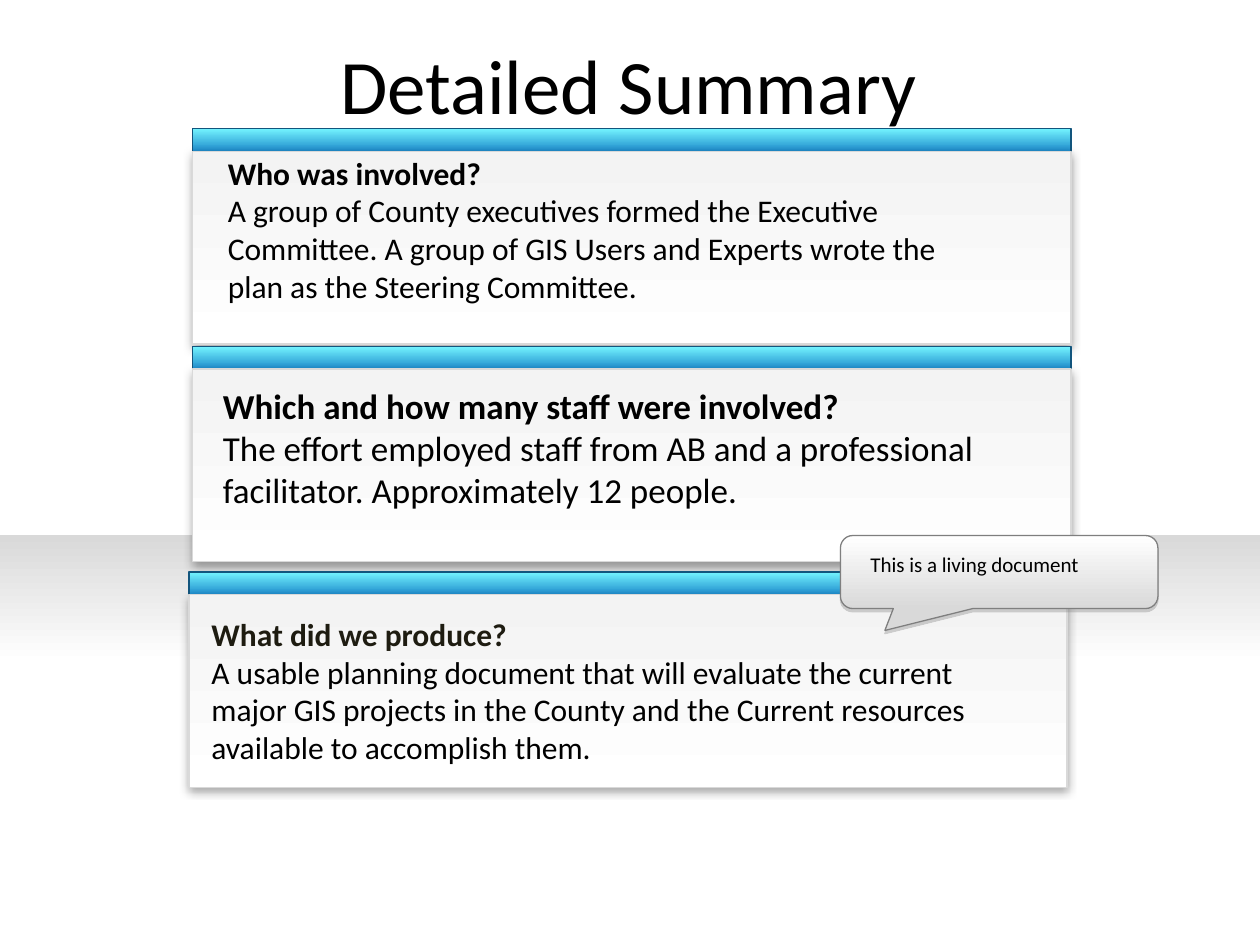
"""Build the Detailed Summary slide with three headed panels and a callout."""
from dataclasses import dataclass

from lxml import etree
from pptx import Presentation
from pptx.dml.color import RGBColor
from pptx.enum.shapes import MSO_SHAPE
from pptx.enum.text import MSO_ANCHOR, PP_ALIGN
from pptx.oxml.ns import qn
from pptx.util import Inches, Pt

RECT = MSO_SHAPE.RECTANGLE
CALLOUT = MSO_SHAPE.ROUNDED_RECTANGULAR_CALLOUT
LEFT, CENTER = PP_ALIGN.LEFT, PP_ALIGN.CENTER
TOP, MIDDLE = MSO_ANCHOR.TOP, MSO_ANCHOR.MIDDLE


@dataclass(frozen=True)
class Theme:
    font: str = "Calibri"
    text: str = "000000"
    dark_text: str = "1E1C11"
    white: str = "FFFFFF"
    grey: str = "D9D9D9"
    panel_top: str = "F3F3F3"
    bar_top: str = "74F4FF"
    bar_bottom: str = "208ECD"
    bar_line: str = "12557D"
    callout_line: str = "7F7F7F"
    callout_shadow: str = "808080"
    title_size: int = 44
    large_size: int = 20
    body_size: int = 18
    note_size: int = 12


THEME = Theme()


@dataclass(frozen=True)
class Box:
    left: float
    top: float
    width: float
    height: float

    def lengths(self) -> tuple:
        return tuple(map(Inches, (self.left, self.top, self.width, self.height)))


@dataclass(frozen=True)
class Panel:
    left: float
    top: float
    text_box: Box
    heading: str
    body: str
    size: int = THEME.body_size
    heading_color: str = THEME.text


PANELS = (
    Panel(1.53, 1.02, Box(1.71, 1.17, 6.2, 1.31), "Who was involved?",
          "A group of County executives formed the Executive Committee. "
          "A group of GIS Users and Experts wrote the plan as the Steering Committee."),
    Panel(1.53, 2.75, Box(1.67, 3, 6.75, 1.11), "Which and how many staff were involved?",
          "The effort employed staff from AB and a professional facilitator. "
          "Approximately 12 people.", size=THEME.large_size),
    Panel(1.5, 4.54, Box(1.58, 4.83, 6.6, 1.31), "What did we produce?",
          "A usable planning document that will evaluate the current major GIS projects "
          "in the County and the Current resources available to accomplish them.",
          heading_color=THEME.dark_text),
)


def add_shadow(sp, color: str, blur: float) -> None:
    shadow = etree.SubElement(
        sp._element.spPr.find(qn("a:effectLst")), qn("a:outerShdw"),
        blurRad=str(Pt(blur)), dist=str(Pt(1.8)), dir="5400000",
        algn="t", rotWithShape="0")
    clr = etree.SubElement(shadow, qn("a:srgbClr"), val=color)
    etree.SubElement(clr, qn("a:alpha"), val="35000")


def add_gradient_shape(s, kind, box: Box, start: str, end: str,
                       stop: float = 1, line: str | None = None):
    sp = s.shapes.add_shape(kind, *box.lengths())
    sp.shadow.inherit = False
    sp.fill.gradient()
    sp.fill.gradient_angle = 270
    for gs, color, position in zip(sp.fill.gradient_stops, (start, end), (0, stop)):
        gs.color.rgb = RGBColor.from_string(color)
        gs.position = position
    if line:
        sp.line.color.rgb = RGBColor.from_string(line)
        sp.line.width = Pt(0.75)
    else:
        sp.line.fill.background()
    return sp


def add_text(s, text: str, box: Box, *, size: int, color: str = THEME.text,
             heading: str = "", heading_color: str = THEME.text,
             align=LEFT, anchor=TOP) -> None:
    tf = s.shapes.add_textbox(*box.lengths()).text_frame
    tf.word_wrap = True
    tf.vertical_anchor = anchor
    lines = [(heading, heading_color, True)] if heading else []
    lines.append((text, color, False))
    for i, (line, line_color, bold) in enumerate(lines):
        p = tf.add_paragraph() if i else tf.paragraphs[0]
        p.alignment = align
        r = p.add_run()
        r.text = line
        r.font.name = THEME.font
        r.font.size = Pt(size)
        r.font.bold = bold
        r.font.color.rgb = RGBColor.from_string(line_color)


def add_panel(s, panel: Panel) -> None:
    add_gradient_shape(s, RECT, Box(panel.left, panel.top, 6.97, 0.22),
                       THEME.bar_top, THEME.bar_bottom, 0.8, THEME.bar_line)
    sp = add_gradient_shape(s, RECT, Box(panel.left, panel.top + 0.18, 6.97, 1.53),
                            THEME.panel_top, THEME.white, line=THEME.grey)
    add_shadow(sp, THEME.text, 5)
    add_text(s, panel.body, panel.text_box, size=panel.size,
             heading=panel.heading, heading_color=panel.heading_color)


def add_callout(s) -> None:
    sp = add_gradient_shape(s, CALLOUT, Box(6.67, 4.25, 2.52, 0.58),
                            THEME.white, THEME.grey, line=THEME.callout_line)
    for i, value in enumerate((-0.36, 0.8, 0.17)):
        sp.adjustments[i] = value
    add_shadow(sp, THEME.callout_shadow, 0)
    add_text(s, "This is a living document", Box(6.81, 4.33, 2.37, 0.3),
             size=THEME.note_size)


def main() -> None:
    prs = Presentation()
    prs.slide_width, prs.slide_height = Inches(10), Inches(7.5)
    s = prs.slides.add_slide(prs.slide_layouts[6])
    add_gradient_shape(s, RECT, Box(0, 4.25, 10, 2.6), THEME.grey, THEME.white, 0.39)
    for panel in PANELS:
        add_panel(s, panel)
    add_callout(s)
    add_text(s, "Detailed Summary", Box(0.49, 0.04, 9, 1.25),
             size=THEME.title_size, align=CENTER, anchor=MIDDLE)
    prs.save("out.pptx")


if __name__ == "__main__":
    main()
